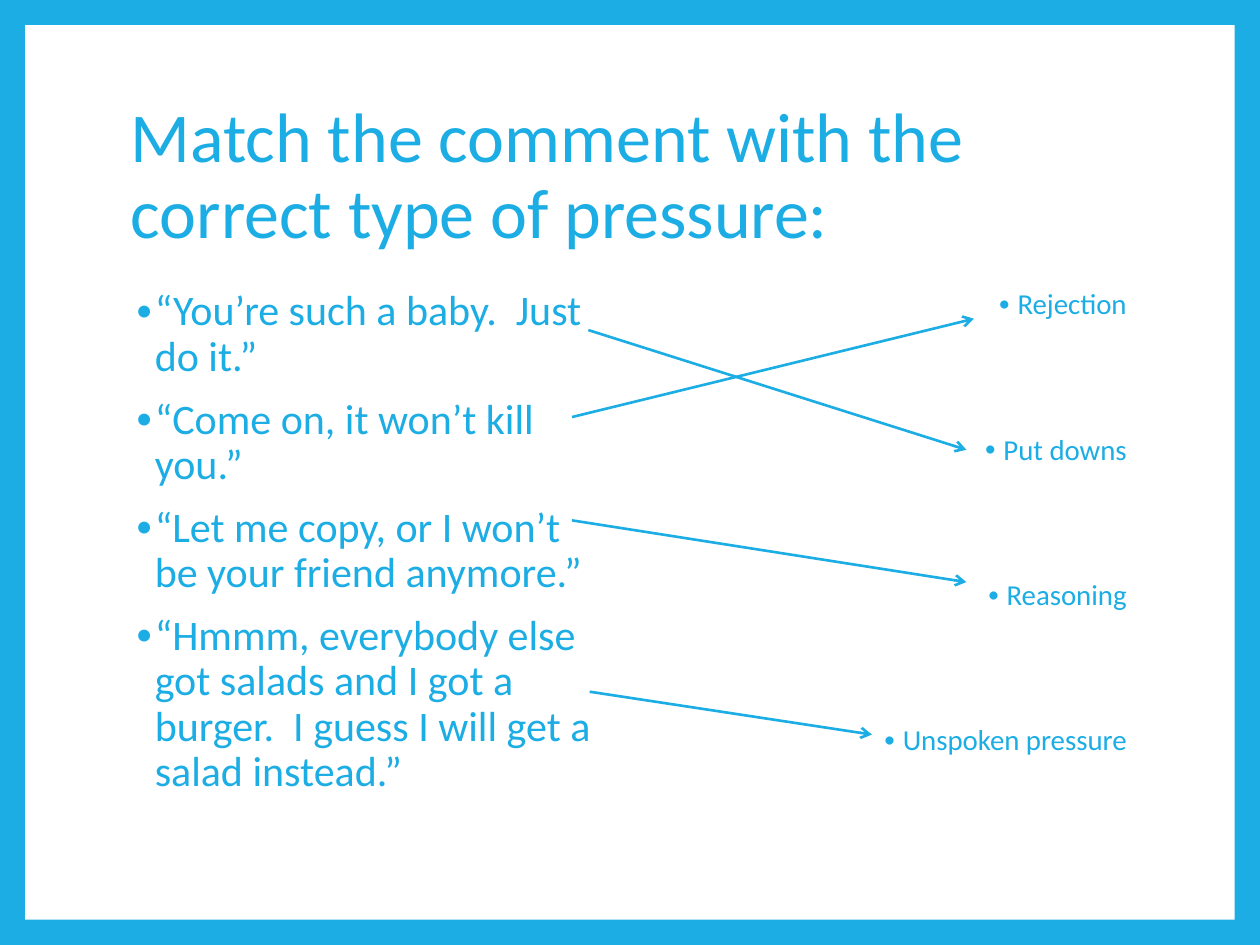
from lxml import etree
from pptx import Presentation
from pptx import util as u
from pptx.dml.color import RGBColor
from pptx.enum import shapes, text
from pptx.oxml.ns import qn

COLORS = {"blue": "1CADE4", "white": "FFFFFF"}
BLUE = RGBColor.from_string(COLORS["blue"])
FONT = "Calibri"

deck = Presentation()
deck.slide_width, deck.slide_height = u.Inches(10), u.Inches(7.5)
slide = deck.slides.add_slide(deck.slide_layouts[6])
slide.background.fill.solid()
slide.background.fill.fore_color.rgb = BLUE

# Layout: a white panel inside a blue border, two columns under the title
BORDER = 0.2
LEFT, TITLE_TOP, COLUMN_TOP = 0.94, 0.67, 2.25
COLUMN_WIDTH, COLUMN_HEIGHT, GAP = 3.9, 4.4, 0.3
RIGHT = LEFT + COLUMN_WIDTH + GAP
TITLE_WIDTH = 2 * COLUMN_WIDTH + GAP

panel = slide.shapes.add_shape(
    shapes.MSO_SHAPE.RECTANGLE, u.Inches(BORDER), u.Inches(BORDER),
    u.Inches(10 - 2 * BORDER), u.Inches(7.5 - 2 * BORDER))
panel.shadow.inherit = False
panel.fill.solid()
panel.fill.fore_color.rgb = RGBColor.from_string(COLORS["white"])
panel.line.fill.background()


def add_text(box, lines, size, align=text.PP_ALIGN.LEFT, space_before=0):
    """Add a wrapped text box with one blue paragraph per line."""
    frame = slide.shapes.add_textbox(*map(u.Inches, box)).text_frame
    frame.word_wrap = True
    frame.text = "\n".join(lines)
    for paragraph in frame.paragraphs:
        paragraph.alignment = align
        paragraph.line_spacing = 0.9
        paragraph.space_before = u.Pt(space_before)
        paragraph.font.name, paragraph.font.size = FONT, u.Pt(size)
        paragraph.font.color.rgb = BLUE
    return frame


def add_bullets(frame):
    for paragraph in frame.paragraphs:
        props = paragraph._p.get_or_add_pPr()
        props.set("marL", str(u.Inches(0.19)))
        props.set("indent", str(u.Inches(-0.15)))
        bullet_color = etree.Element(qn("a:buClr"))
        etree.SubElement(bullet_color, qn("a:srgbClr"), val=COLORS["blue"])
        bullet_parts = [
            bullet_color,
            etree.Element(qn("a:buSzPct"), val="80000"),
            etree.Element(qn("a:buFont"), typeface=FONT),
            etree.Element(qn("a:buChar"), char="•"),
        ]
        # Bullet parts belong between the spacing and the default font
        default_font = props.find(qn("a:defRPr"))
        for part in bullet_parts:
            default_font.addprevious(part)


title = add_text((LEFT, TITLE_TOP, TITLE_WIDTH, 1.48),
                 ["Match the comment with the correct type of pressure:"], 40)
title.vertical_anchor = text.MSO_ANCHOR.MIDDLE

comments = [
    "“You’re such a baby.  Just do it.”",
    "“Come on, it won’t kill you.”",
    "“Let me copy, or I won’t be your friend anymore.”",
    "“Hmmm, everybody else got salads and I got a burger.  "
    "I guess I will get a salad instead.”",
]
add_bullets(add_text((LEFT, COLUMN_TOP, COLUMN_WIDTH, COLUMN_HEIGHT),
                     comments, 24, space_before=10))

pressures = ["Rejection", "Put downs", "Reasoning", "Unspoken pressure"]
add_bullets(add_text((RIGHT, COLUMN_TOP, COLUMN_WIDTH, COLUMN_HEIGHT),
                     pressures, 16.5, text.PP_ALIGN.RIGHT, space_before=65.3))

# Each arrow runs from a comment to its type of pressure
matches = [
    (4.67, 2.62, 7.67, 3.57),
    (4.54, 4.13, 7.67, 4.62),
    (4.54, 3.31, 7.73, 2.53),
    (4.68, 5.49, 6.92, 5.83),
]
for ends in matches:
    arrow = slide.shapes.add_connector(
        shapes.MSO_CONNECTOR.STRAIGHT, *map(u.Inches, ends))
    arrow.line.color.rgb = BLUE
    arrow.line.width = u.Pt(1.5)
    etree.SubElement(arrow.line._get_or_add_ln(), qn("a:tailEnd"), type="arrow")
    etree.SubElement(arrow._element.spPr, qn("a:effectLst"))

deck.save("out.pptx")
